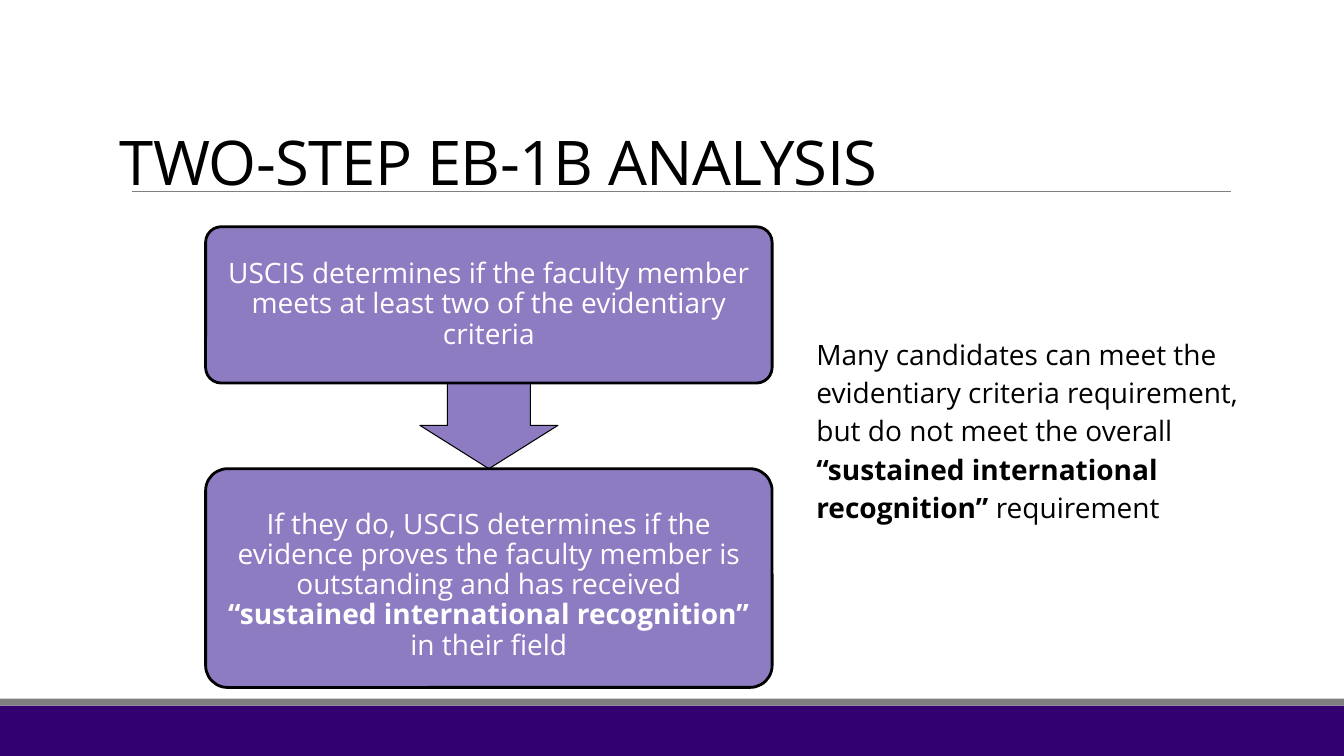
from lxml import etree
from pptx import Presentation
from pptx import util as u
from pptx.dml.color import RGBColor
from pptx.enum import shapes, text
from pptx.oxml import ns

BLACK = RGBColor(0x00, 0x00, 0x00)
WHITE = RGBColor(0xFF, 0xFF, 0xFF)
GRAY = RGBColor(0x7F, 0x7F, 0x7F)
RULE = RGBColor(0x80, 0x80, 0x80)
NAVY = RGBColor(0x33, 0x00, 0x6F)
LILAC = RGBColor(0x8E, 0x7C, 0xC3)
KIND = shapes.MSO_SHAPE
MID = text.MSO_ANCHOR.MIDDLE
CENTER = text.PP_ALIGN.CENTER
KEY = "“sustained international recognition” "


class Deck:
    """Style and current slide; lengths are percent of the slide's size."""
    font = "Open Sans"

    def __init__(self):
        self.deck = Presentation()
        self.deck.slide_width = u.Inches(13.33)
        self.deck.slide_height = u.Inches(7.5)
        self.slide = self.deck.slides.add_slide(self.deck.slide_layouts[6])

    def x(self, share):
        return round(self.deck.slide_width * share / 100)

    def y(self, share):
        return round(self.deck.slide_height * share / 100)

    def area(self, left, top, wide, high):
        return self.x(left), self.y(top), self.x(wide), self.y(high)

    def shape(self, kind, area, fill, edge=0, bends=()):
        item = self.slide.shapes.add_shape(kind, *self.area(*area))
        item.shadow.inherit = False
        item.fill.solid()
        item.fill.fore_color.rgb = fill
        if edge:
            item.line.color.rgb = BLACK
            item.line.width = u.Pt(edge)
        else:
            item.line.fill.background()
        for i, bend in enumerate(bends):
            item.adjustments[i] = bend
        return item

    def rule(self, left, right, top):
        line = self.slide.shapes.add_connector(
            shapes.MSO_CONNECTOR.STRAIGHT,
            self.x(left), self.y(top), self.x(right), self.y(top))
        line.line.color.rgb = RULE
        line.line.width = u.Pt(0.5)
        etree.SubElement(line._element.spPr, ns.qn("a:effectLst"))

    def words(self, item, parts, size, color, space):
        """Fill one paragraph; every second part is bold."""
        frame = item.text_frame
        frame.word_wrap = True
        para = frame.paragraphs[0]
        para.line_spacing = space
        for i, part in enumerate(parts):
            run = para.add_run()
            run.text = part
            run.font.name = self.font
            run.font.size = u.Pt(size)
            run.font.bold = i % 2 == 1
            run.font.color.rgb = color
        return para

    def label(self, area, parts, size, space, anchor=text.MSO_ANCHOR.TOP):
        item = self.slide.shapes.add_textbox(*self.area(*area))
        item.text_frame.vertical_anchor = anchor
        return self.words(item, parts, size, BLACK, space)

    def step(self, area, parts, drop=0):
        item = self.shape(KIND.ROUNDED_RECTANGLE, area, LILAC, 2, [0.1])
        frame = item.text_frame
        frame.vertical_anchor = MID
        frame.margin_left = frame.margin_right = u.Inches(0.08)
        frame.margin_top = u.Inches(0.08 + drop)
        frame.margin_bottom = u.Inches(0.08)
        para = self.words(item, parts, 20, WHITE, 0.9)
        para.alignment = CENTER
        para.space_after = u.Pt(7)


def main():
    page = Deck()

    # Footer bands and title rule
    page.shape(KIND.RECTANGLE, (0, 93.33, 100, 6.67), NAVY)
    page.shape(KIND.RECTANGLE, (0, 92.4, 100, 0.93), GRAY)
    page.rule(9.83, 91.58, 25.33)

    # Title
    title = page.label((8.18, 17.2, 67.5, 9.73),
                       ["TWO-STEP EB-1B ANALYSIS"], 44, 0.85, MID)
    title.runs[0].font._element.set("spc", "-50")

    # Two steps, with an arrow centred between them
    left, wide, next_top = 15.3, 42.15, 62
    tip, drop = 10.28, 11.47
    page.shape(KIND.DOWN_ARROW,
               (left + (wide - tip) / 2, next_top - drop, tip, drop),
               LILAC, 0.75, [0.6, 0.5])
    page.step((left, 30, wide, 20.67),
              ["USCIS determines if the faculty member meets at least two "
               "of the evidentiary criteria"])
    page.step((left, next_top, wide, 28.93),
              ["If they do, USCIS determines if the evidence proves the "
               "faculty member is outstanding and has received ",
               KEY, "in their field"], 0.15)

    # Side note
    page.label((60, 43.33, 34.43, 44.4),
               ["Many candidates can meet the evidentiary criteria "
                "requirement, but do not meet the overall ",
                KEY, "requirement"], 20, 1.14)

    page.deck.save("out.pptx")


if __name__ == "__main__":
    main()
